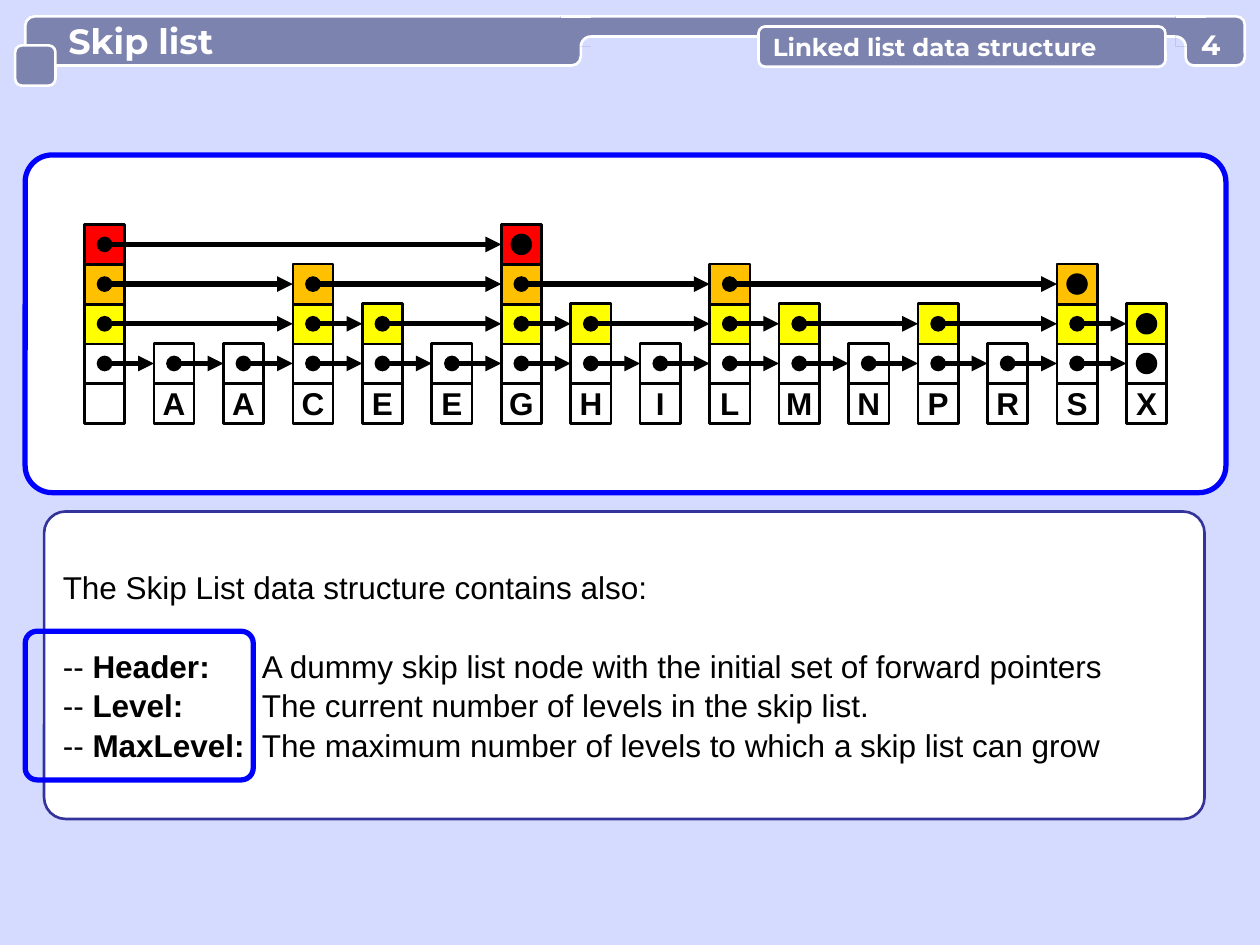
import math

from lxml import etree
from pptx import Presentation
from pptx.dml.color import RGBColor
from pptx.enum import shapes, text
from pptx.oxml.ns import qn
from pptx.util import Inches, Pt

SKY = RGBColor(0xD5, 0xDA, 0xFF)
SLATE = RGBColor(0x7D, 0x83, 0xAF)
WHITE = RGBColor(0xFF, 0xFF, 0xFF)
BLACK = RGBColor(0, 0, 0)
BLUE = RGBColor(0, 0, 0xFF)
INDIGO = RGBColor(0x33, 0x33, 0x99)
YELLOW = RGBColor(0xFF, 0xFF, 0)
AMBER = RGBColor(0xFF, 0xC0, 0)
RED = RGBColor(0xFF, 0, 0)
LEVEL_COLORS = [WHITE, YELLOW, AMBER, RED]

RECT = shapes.MSO_SHAPE.RECTANGLE
ROUND = shapes.MSO_SHAPE.ROUNDED_RECTANGLE
OVAL = shapes.MSO_SHAPE.OVAL

# Node letter and number of forward pointers; the first node is the header.
NODES = [("", 4), ("A", 1), ("A", 1), ("C", 3), ("E", 2), ("E", 1), ("G", 4), ("H", 2),
         ("I", 1), ("L", 3), ("M", 2), ("N", 1), ("P", 2), ("R", 1), ("S", 3), ("X", 2)]
CELL, DOT = 0.32, 0.16
FIRST_LEFT, LAST_LEFT = 0.67, 8.94
LETTER_TOP, HIGHEST_TOP = 3.04, 1.78
COLUMN_STEP = (LAST_LEFT - FIRST_LEFT) / (len(NODES) - 1)
ROW_STEP = (LETTER_TOP - HIGHEST_TOP) / len(LEVEL_COLORS)

TERMS = [("Header:", "A dummy skip list node with the initial set of forward pointers"),
         ("Level:", "The current number of levels in the skip list."),
         ("MaxLevel:", "The maximum number of levels to which a skip list can grow")]


def paint(shape, fill, line, weight=1.5):
    shape.shadow.inherit = False
    if fill is None:
        shape.fill.background()
    else:
        shape.fill.solid()
        shape.fill.fore_color.rgb = fill
    if line is None:
        shape.line.fill.background()
    else:
        shape.line.color.rgb = line
        shape.line.width = Pt(weight)


def add_block(page, kind, place, fill, line, weight=1.5, corner=None):
    block = page.shapes.add_shape(kind, *map(Inches, place))
    paint(block, fill, line, weight)
    if corner is not None:
        block.adjustments[0] = corner
    return block


def set_font(para, size, name, color, bold=False):
    font = para.font
    font.size, font.name, font.bold = Pt(size), name, bold
    font.color.rgb = color


def write(shape, words, size, name, color, align=text.PP_ALIGN.LEFT, sides=0.1):
    """Put one bold, vertically centred line into the shape."""
    frame = shape.text_frame
    frame.word_wrap = True
    frame.vertical_anchor = text.MSO_ANCHOR.MIDDLE
    frame.margin_left = frame.margin_right = Inches(sides)
    frame.margin_top = frame.margin_bottom = 0
    para = frame.paragraphs[0]
    para.text, para.alignment = words, align
    set_font(para, size, name, color, bold=True)


def add_line(page, start, end, color, weight):
    line = page.shapes.add_connector(shapes.MSO_CONNECTOR.STRAIGHT,
                                     *map(Inches, (*start, *end)))
    line.line.color.rgb = color
    line.line.width = Pt(weight)
    etree.SubElement(line._element.spPr, qn("a:effectLst"))
    return line


def add_pointer(page, start_cell, end_cell):
    """Arrow from the middle of one cell to the left side of another."""
    middle = start_cell.top + start_cell.height // 2
    center = start_cell.left + start_cell.width // 2
    start = (center / Inches(1), middle / Inches(1))
    arrow = add_line(page, start, start, BLACK, 3)
    arrow.end_connect(end_cell, 1)
    outline = arrow.line._get_or_add_ln()
    for tag, head in (("a:headEnd", "oval"), ("a:tailEnd", "triangle")):
        etree.SubElement(outline, qn(tag), type=head)


def add_inner_corner(page, center_x, side):
    """Concave corner below the top bar; side is -1 for left and 1 for right."""
    center_y, radius = 0.37, 0.08
    angles = [math.radians(90 * step / 8) for step in range(9)]
    arc = [(Inches(center_x + side * radius * math.sin(angle)),
            Inches(center_y - radius * math.cos(angle))) for angle in angles]
    center = (Inches(center_x), Inches(center_y))
    for points, closed, fill, line in ((arc + [center], True, SKY, None),
                                       (arc, False, None, WHITE)):
        builder = page.shapes.build_freeform(*points[0])
        builder.add_line_segments(points[1:], close=closed)
        paint(builder.convert_to_shape(), fill, line)


def add_joint(page, left, center_x, side):
    """Hide the seam between the top bar and its neighbour."""
    add_block(page, RECT, (left, 0.13, 0.24, 0.24), SLATE, None)
    add_line(page, (left, 0.13), (left + 0.24, 0.13), WHITE, 1.5)
    add_inner_corner(page, center_x, side)


def add_header(page):
    def bar(place, corner=0.17):
        return add_block(page, ROUND, place, SLATE, WHITE, corner=corner)

    title = bar((0.2, 0.13, 4.41, 0.39), 0.19)
    write(title, "Skip list", 20, "Montserrat", WHITE)
    title.text_frame.margin_left = Inches(0.32)
    bar((4.61, 0.13, 4.88, 0.16), 0.5)
    add_joint(page, 4.45, 4.69, -1)
    bar((0.12, 0.36, 0.32, 0.32))
    bar((9.41, 0.13, 0.47, 0.39))
    add_joint(page, 9.33, 9.33, 1)
    topic = bar((6.02, 0.21, 3.23, 0.32))
    write(topic, "Linked list data structure", 14, "Montserrat", WHITE)
    number = page.shapes.add_textbox(*map(Inches, (9.41, 0.22, 0.4, 0.27)))
    write(number, "4", 16, "Montserrat", WHITE, text.PP_ALIGN.CENTER, sides=0)


def add_description(page):
    panel = add_block(page, ROUND, (0.35, 4.06, 9.21, 2.44), WHITE, INDIGO, corner=0.07)
    frame = panel.text_frame
    frame.word_wrap = True
    frame.vertical_anchor = text.MSO_ANCHOR.MIDDLE
    frame.paragraphs[0].text = "The Skip List data structure contains also:"
    for term, meaning in TERMS:
        para = frame.add_paragraph()
        for words, bold in (("-- ", False), (term, True), ("\t" + meaning, False)):
            span = para.add_run()
            span.text, span.font.bold = words, bold
    for para in frame.paragraphs:
        para.alignment = text.PP_ALIGN.LEFT
        para.line_spacing = 1.05
        set_font(para, 18, "Arial", BLACK)
    for para in frame.paragraphs[1:]:
        properties = para._p.get_or_add_pPr()
        tabs = etree.Element(qn("a:tabLst"))
        etree.SubElement(tabs, qn("a:tab"), pos=str(Inches(1.58)), algn="l")
        properties.find(qn("a:defRPr")).addprevious(tabs)
    frame.paragraphs[1].space_before = Pt(22)
    add_block(page, ROUND, (0.2, 5.01, 1.81, 1.18), None, BLUE, 3, 0.08)


def add_skip_list(page):
    levels = [[] for _ in LEVEL_COLORS]
    for column, (letter, height) in enumerate(NODES):
        left = FIRST_LEFT + column * COLUMN_STEP
        foot = add_block(page, RECT, (left, LETTER_TOP, CELL, CELL), WHITE, BLACK)
        if letter:
            write(foot, letter, 18, "Arial", BLACK, text.PP_ALIGN.CENTER, sides=0)
        for level in range(height):
            top = LETTER_TOP - (level + 1) * ROW_STEP
            cell = add_block(page, RECT, (left, top, CELL, CELL),
                             LEVEL_COLORS[level], BLACK)
            levels[level].append(cell)
    for cells in levels:
        for start_cell, end_cell in zip(cells, cells[1:]):
            add_pointer(page, start_cell, end_cell)
        inset = (CELL - DOT) / 2
        last = cells[-1]
        add_block(page, OVAL, (last.left / Inches(1) + inset, last.top / Inches(1) + inset,
                               DOT, DOT), BLACK, BLACK, 0.75)


def main():
    deck = Presentation()
    deck.slide_width, deck.slide_height = Inches(10), Inches(7.5)
    page = deck.slides.add_slide(deck.slide_layouts[6])
    page.background.fill.solid()
    page.background.fill.fore_color.rgb = SKY
    add_block(page, ROUND, (0.2, 1.23, 9.53, 2.68), WHITE, BLUE, 3, 0.08)
    add_description(page)
    add_header(page)
    add_skip_list(page)
    deck.save("out.pptx")


if __name__ == "__main__":
    main()
